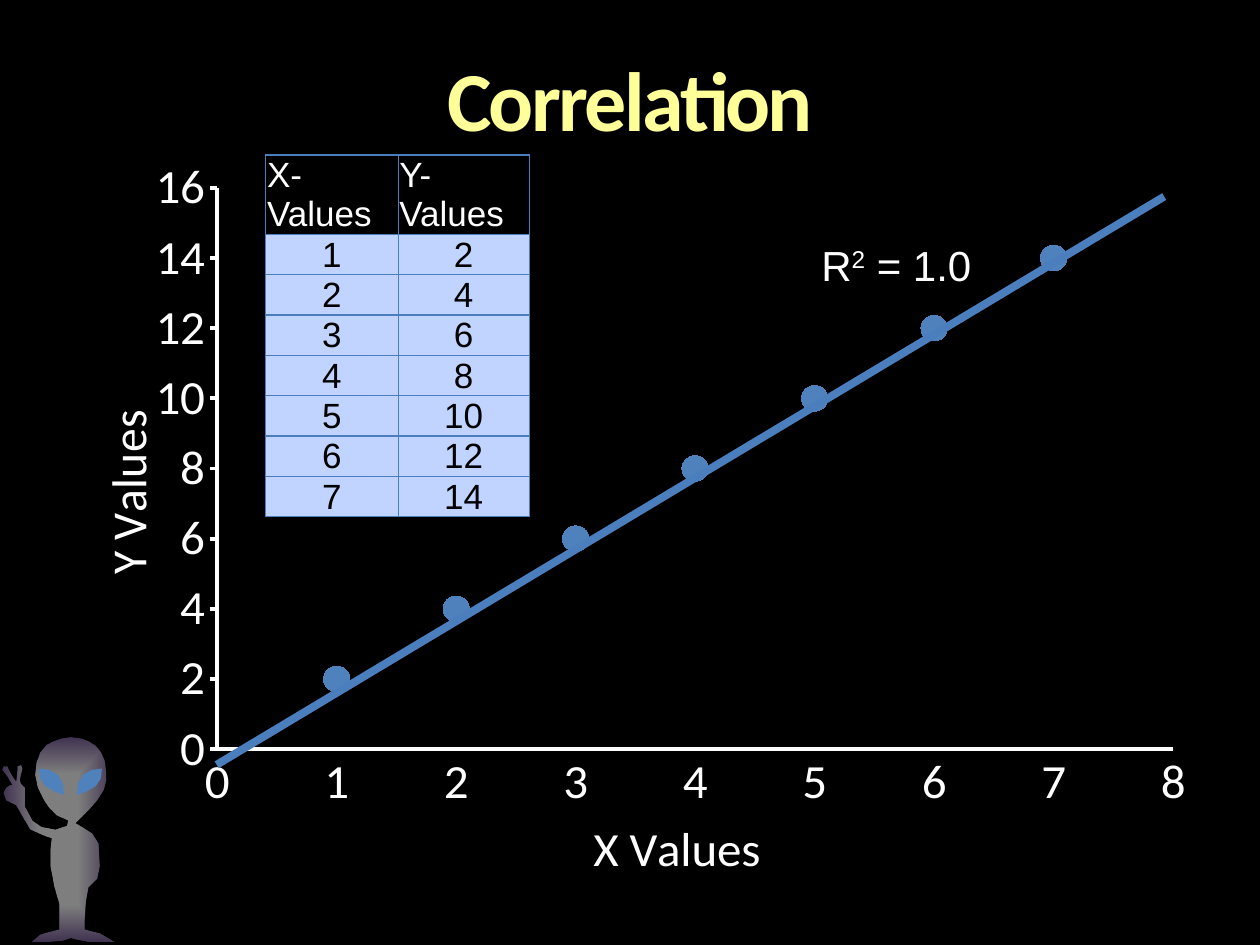
from dataclasses import dataclass

from lxml.etree import SubElement
from pptx import Presentation
from pptx.chart.data import XyChartData
from pptx.dml.color import RGBColor
from pptx.enum.chart import XL_CHART_TYPE, XL_MARKER_STYLE, XL_TICK_MARK
from pptx.enum.shapes import MSO_CONNECTOR
from pptx.enum.text import MSO_ANCHOR, PP_ALIGN
from pptx.oxml import parse_xml
from pptx.oxml.ns import nsdecls, qn
from pptx.util import Pt

PX = 9144  # 100 px to the inch


@dataclass(frozen=True)
class Theme:
    black: RGBColor = RGBColor(0x00, 0x00, 0x00)
    white: RGBColor = RGBColor(0xFF, 0xFF, 0xFF)
    yellow: RGBColor = RGBColor(0xFF, 0xFF, 0x99)
    blue: RGBColor = RGBColor(0x4F, 0x81, 0xBD)
    line_blue: RGBColor = RGBColor(0x4B, 0x7E, 0xBC)
    cell_blue: RGBColor = RGBColor(0xC0, 0xD4, 0xFF)
    heading: str = "Calibri"
    body: str = "Arial"
    title_size: int = Pt(48)
    chart_size: int = Pt(28)
    label_size: int = Pt(24)
    table_size: int = Pt(20)


theme = Theme()
x_values = range(1, 8)
points = [(x, 2 * x) for x in x_values]


def style_font(font, name, size, color, bold=False):
    font.name, font.size, font.bold = name, size, bold
    font.color.rgb = color


def add_outline(group, outline):
    builder = group.shapes.build_freeform(*outline[0], scale=PX)
    builder.add_line_segments(outline[1:], close=True)
    shape = builder.convert_to_shape()
    shape.shadow.inherit = False
    shape.line.fill.background()
    shape.fill.solid()
    shape.fill.fore_color.rgb = theme.blue
    return shape


deck = Presentation()
deck.slide_width, deck.slide_height = 1000 * PX, 750 * PX
page = deck.slides.add_slide(deck.slide_layouts[5])
page.background.fill.solid()
page.background.fill.fore_color.rgb = theme.black

# Alien in the corner
alien_outline = [
    (56, 585), (64, 586), (70, 588), (76, 592), (80, 597), (83, 604), (84, 612),
    (84, 620), (82, 627), (77, 635), (71, 642), (60, 653), (65, 656), (73, 661),
    (78, 669), (79, 687), (77, 697), (70, 704), (68, 716), (67, 730), (67, 737),
    (79, 740), (91, 747), (70, 747), (60, 745), (56, 744), (50, 746), (39, 747),
    (25, 747), (32, 741), (39, 739), (47, 737), (47, 717), (43, 703), (40, 687),
    (40, 674), (41, 665), (35, 663), (24, 658), (17, 646), (13, 639), (5, 635),
    (3, 629), (5, 625), (8, 623), (10, 623), (6, 616), (2, 611), (3, 608),
    (6, 608), (9, 614), (13, 620), (14, 611), (14, 608), (17, 607), (18, 610),
    (16, 619), (17, 622), (20, 625), (20, 629), (20, 640), (26, 651), (33, 656),
    (44, 658), (53, 655), (54, 651), (45, 647), (39, 641), (35, 635), (30, 625),
    (28, 615), (29, 605), (32, 597), (37, 591), (43, 588), (49, 586),
]
left_eye = [(31, 610), (39, 611), (46, 615), (50, 622), (51, 631),
            (43, 628), (36, 624), (32, 618)]
alien = page.shapes.add_group_shape()
body = add_outline(alien, alien_outline)
stops = "".join(
    f'<a:gs pos="{position}"><a:srgbClr val="{color}"><a:alpha val="50000"/></a:srgbClr></a:gs>'
    for position, color in ((0, "FFFFFF"), (35000, "FFFFFF"), (100000, "8064A2")))
solid = body._element.spPr.find(qn("a:solidFill"))
solid.getparent().replace(solid, parse_xml(
    f'<a:gradFill {nsdecls("a")} rotWithShape="1"><a:gsLst>{stops}</a:gsLst>'
    '<a:path path="shape"><a:fillToRect l="50000" t="50000" r="50000" b="50000"/></a:path>'
    '</a:gradFill>'))
add_outline(alien, left_eye)
add_outline(alien, [(112 - x, y) for x, y in left_eye])

# Title
title = page.shapes.title
title.left, title.top, title.width, title.height = 50 * PX, 30 * PX, 900 * PX, 125 * PX
frame = title.text_frame
frame.text = "Correlation"
frame.vertical_anchor = MSO_ANCHOR.TOP
frame.margin_top = 8 * PX
para = frame.paragraphs[0]
para.alignment = PP_ALIGN.CENTER
style_font(para.font, theme.heading, theme.title_size, theme.yellow, bold=True)
para.runs[0].font._element.set("spc", "-150")

# Scatter chart
data = XyChartData()
series_data = data.add_series("Series 1")
for x, y in points:
    series_data.add_data_point(x, y)
chart = page.shapes.add_chart(XL_CHART_TYPE.XY_SCATTER, 50 * PX, 123 * PX,
                              900 * PX, 586 * PX, data).chart
chart.has_legend = chart.has_title = False
style_font(chart.font, theme.heading, theme.chart_size, theme.white)
chart.plots[0].vary_by_categories = False


def set_layout(parent, **values):
    """Place a chart part by fractions of the chart's size."""
    old = parent.find(qn("c:layout"))
    if old is not None:
        parent.remove(old)
    layout = parse_xml(f'<c:layout {nsdecls("c")}/>')
    manual = SubElement(layout, qn("c:manualLayout"))
    for name, value in values.items():
        SubElement(manual, qn(f"c:{name}")).set("val", str(value))
    text = parent.find(qn("c:tx"))
    parent.insert(0 if text is None else 1, layout)


set_layout(chart._chartSpace.chart.plotArea, layoutTarget="inner", xMode="edge",
           yMode="edge", x=0.136, y=0.046, w=0.843, h=0.783)
for axis, name, top_value, step, tick, x, y in (
        (chart.category_axis, "X Values", 8, 1, XL_TICK_MARK.NONE, 0.46, 0.91),
        (chart.value_axis, "Y Values", 16, 2, XL_TICK_MARK.OUTSIDE, 0.02, 0.35)):
    axis.minimum_scale, axis.maximum_scale, axis.major_unit = 0, top_value, step
    axis.has_major_gridlines = False
    axis.major_tick_mark, axis.minor_tick_mark = tick, XL_TICK_MARK.NONE
    axis.format.line.color.rgb = theme.white
    axis.format.line.width = Pt(2.25)
    style_font(axis.tick_labels.font, theme.heading, theme.chart_size, theme.white)
    axis.axis_title.text_frame.text = name
    style_font(axis.axis_title.text_frame.paragraphs[0].font,
               theme.heading, theme.chart_size, theme.white)
    set_layout(axis.axis_title._element, xMode="edge", yMode="edge", x=x, y=y)

series = chart.plots[0].series[0]
series.smooth = False
series.format.line.fill.background()
series.marker.style, series.marker.size = XL_MARKER_STYLE.CIRCLE, 15
series.marker.format.fill.solid()
series.marker.format.fill.fore_color.rgb = theme.blue
series.marker.format.line.color.rgb = theme.blue

# Table of values
rows = [("X-Values", "Y-Values"), *points]
table = page.shapes.add_table(len(rows), 2, 211 * PX, 123 * PX, 209 * PX, 287 * PX).table
table.first_row = table.horz_banding = False
for column, width in zip(table.columns, (105, 104)):
    column.width = width * PX
for row_index, values in enumerate(rows):
    header = row_index == 0
    table.rows[row_index].height = (63 if header else 32) * PX
    for column_index, value in enumerate(values):
        cell = table.cell(row_index, column_index)
        cell.margin_left = cell.margin_right = cell.margin_top = 1 * PX
        cell.margin_bottom = 0
        cell.vertical_anchor = MSO_ANCHOR.BOTTOM
        cell.text = str(value)
        para = cell.text_frame.paragraphs[0]
        para.alignment = PP_ALIGN.LEFT if header else PP_ALIGN.CENTER
        style_font(para.font, theme.body, theme.table_size,
                   theme.white if header else theme.black)
        for side in "LRTB":
            cell._tc.get_or_add_tcPr().append(parse_xml(
                f'<a:ln{side} {nsdecls("a")} w="{Pt(0.75)}"><a:solidFill>'
                f'<a:srgbClr val="{theme.line_blue}"/></a:solidFill></a:ln{side}>'))
        cell.fill.solid()
        cell.fill.fore_color.rgb = theme.black if header else theme.cell_blue

# Fitted line and its label
fit = page.shapes.add_connector(MSO_CONNECTOR.STRAIGHT, 172 * PX, 607 * PX, 924 * PX, 156 * PX)
fit.line.color.rgb = theme.line_blue
fit.line.width = Pt(4.5)
SubElement(fit._element.spPr, qn("a:effectLst"))

box = page.shapes.add_textbox(642 * PX, 185 * PX, 142 * PX, 50 * PX)
box.text_frame.word_wrap = False
para = box.text_frame.paragraphs[0]
for text in ("R", "2", " = 1.0"):
    span = para.add_run()
    span.text = text
para.runs[1].font._element.set("baseline", "30000")
style_font(para.font, theme.body, theme.label_size, theme.white)

deck.save("out.pptx")
